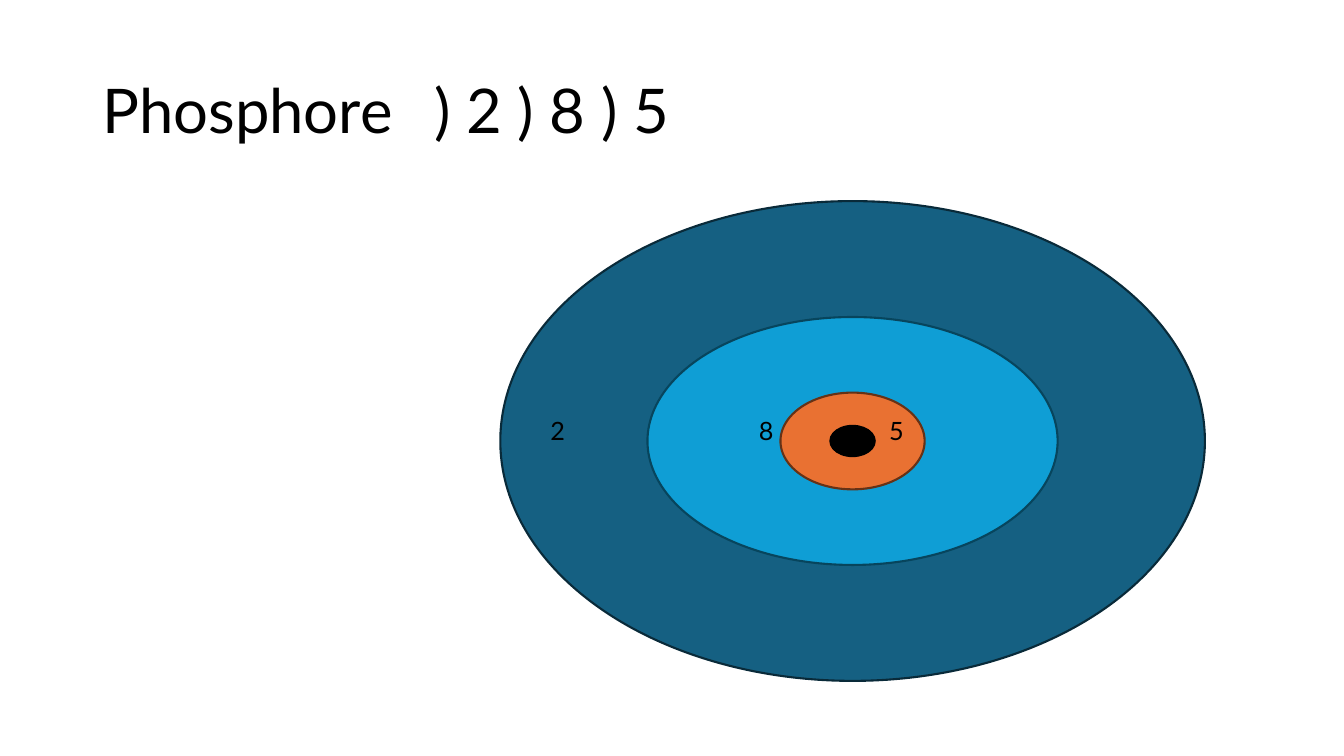
import pptx
import pptx.dml.color
import pptx.enum.shapes
import pptx.enum.text
import pptx.oxml
import pptx.oxml.ns
import pptx.util

Pt = pptx.util.Pt
RGBColor = pptx.dml.color.RGBColor
ANCHOR = pptx.enum.text.MSO_ANCHOR

BLACK = RGBColor(0x00, 0x00, 0x00)
DARK_BLUE = RGBColor(0x15, 0x60, 0x82)
DARK_BLUE_EDGE = RGBColor(0x09, 0x2A, 0x39)
BLUE = RGBColor(0x0F, 0x9E, 0xD5)
BLUE_EDGE = RGBColor(0x07, 0x45, 0x5D)
ORANGE = RGBColor(0xE9, 0x71, 0x32)
ORANGE_EDGE = RGBColor(0x66, 0x32, 0x16)

CENTRE_X, CENTRE_Y = 609, 315


def add_tabbed_text(page, bounds, text, size, tabs, frame_format):
    """Add a one-line text box whose tab stops are (position, alignment) pairs."""
    box = page.shapes.add_textbox(*map(Pt, bounds))
    frame = box.text_frame
    for name, value in frame_format.items():
        setattr(frame, name, value)
    para = frame.paragraphs[0]
    tab_list = pptx.oxml.parse_xml(
        f"<a:tabLst {pptx.oxml.ns.nsdecls('a')}>"
        + "".join(f'<a:tab pos="{Pt(pos)}" algn="{align}"/>' for pos, align in tabs)
        + "</a:tabLst>"
    )
    para._p.get_or_add_pPr().append(tab_list)
    span = para.add_run()
    span.text = text
    for name, value in {"name": "Lato", "size": Pt(size)}.items():
        setattr(span.font, name, value)
    span.font.color.rgb = BLACK
    return para


deck = pptx.Presentation()
deck.slide_width, deck.slide_height = Pt(960), Pt(540)
page = deck.slides.add_slide(deck.slide_layouts[6])

title = add_tabbed_text(
    page, (66, 28.8, 828, 104.4), "Phosphore\t) 2 ) 8 ) 5", 44, [(237, "l")],
    {"word_wrap": True, "vertical_anchor": ANCHOR.MIDDLE},
)
title.line_spacing = 0.9

# Electron shells from the outside in, then the nucleus
shells = [
    (503.3, 342.7, DARK_BLUE, DARK_BLUE_EDGE),
    (293, 177.1, BLUE, BLUE_EDGE),
    (103, 69.1, ORANGE, ORANGE_EDGE),
    (31.7, 21.6, BLACK, BLACK),
]
for width, height, fill, edge in shells:
    shell = page.shapes.add_shape(
        pptx.enum.shapes.MSO_SHAPE.OVAL,
        Pt(CENTRE_X - width / 2), Pt(CENTRE_Y - height / 2), Pt(width), Pt(height),
    )
    shell.shadow.inherit = False
    shell.fill.solid()
    shell.fill.fore_color.rgb = fill
    shell.line.color.rgb = edge
    shell.line.width = Pt(1.5)

add_tabbed_text(
    page, (354.2, 293, 505.4, 29), "\t2\t8\t5", 18,
    [(37, "ctr"), (186, "ctr"), (279, "ctr")],
    {"word_wrap": True, "auto_size": pptx.enum.text.MSO_AUTO_SIZE.SHAPE_TO_FIT_TEXT},
)

deck.save("out.pptx")
